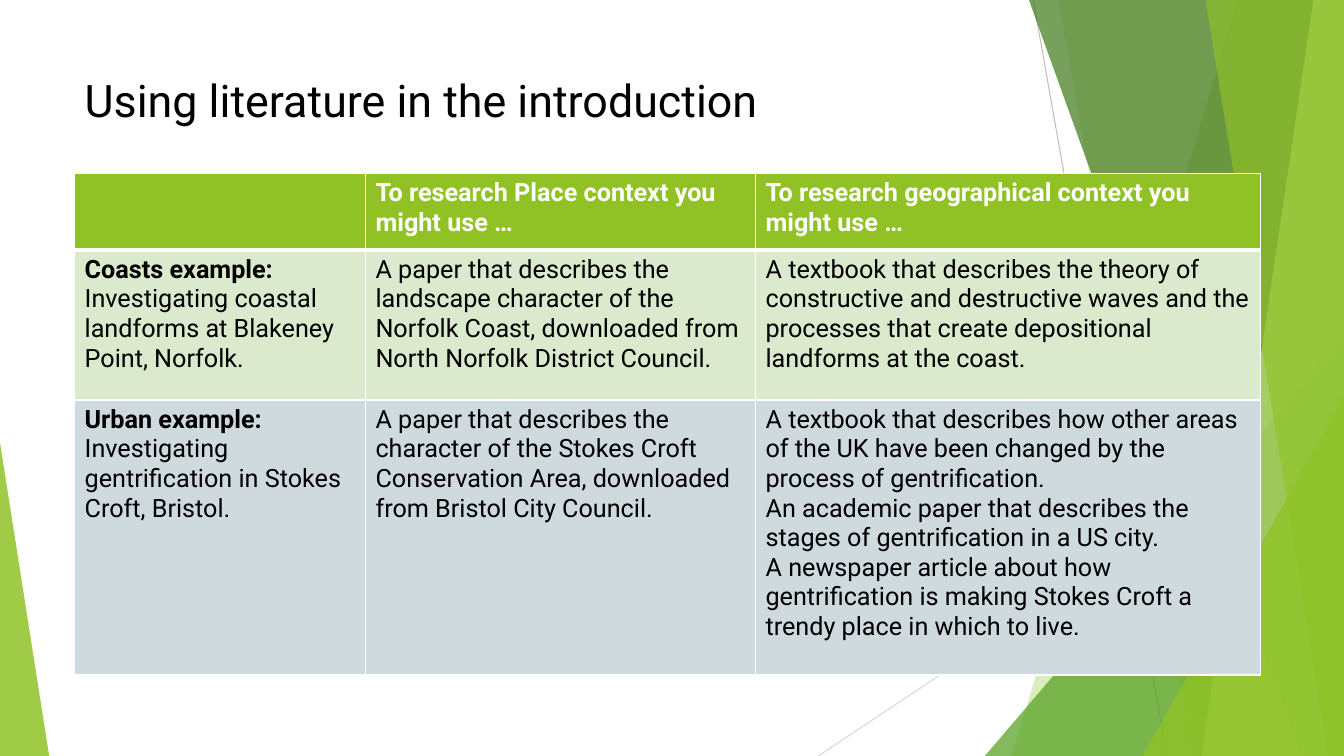
"""Build a slide with a table on using literature in the introduction."""
from lxml import etree
from pptx import Presentation
from pptx.dml.color import RGBColor
from pptx.enum import shapes, text
from pptx.oxml import ns
from pptx.util import Cm, Pt

FONT = "Roboto"
WIDTH, HEIGHT = 33.87, 19.05
TITLE = "Using literature in the introduction"
TITLE_BOX = (1.88, 1.7, 23.88, 2.21)
TABLE_LEFT, TABLE_TOP = 1.88, 4.37
COLUMNS = (7.33, 9.83, 12.73)
ROWS = (
    {"height": 1.93, "fill": "90C226", "color": "FFFFFF", "cells": (
        (),
        (("*To research Place context you might use …",),),
        (("*To research geographical context you might use …",),),
    )},
    {"height": 3.78, "fill": "DBE9CD", "color": "000000", "cells": (
        (("*Coasts example: ", "Investigating coastal landforms at Blakeney Point, Norfolk."),),
        (("A paper that describes the landscape character of the Norfolk Coast, "
          "downloaded from North Norfolk District Council.",),),
        (("A textbook that describes the theory of constructive and destructive waves "
          "and the processes that create depositional landforms at the coast.",),),
    )},
    {"height": 6.93, "fill": "CFDADF", "color": "000000", "cells": (
        (("*Urban example:", " Investigating gentrification in Stokes Croft, Bristol."),),
        (("A paper that describes the character of the Stokes Croft Conservation Area, "
          "downloaded from Bristol City Council.",),),
        (("A textbook that describes how other areas of the UK have been changed "
          "by the process of gentrification.",),
         ("An academic paper that describes the stages of gentrification in a US city.",),
         ("A newspaper article about how gentrification is making Stokes Croft "
          "a trendy place in which to live.",)),
    )},
)
RAYS = (
    ((26.04, 0), (29.41, HEIGHT), "BFBFBF"),
    ((WIDTH, 10.24), (20.62, HEIGHT), "D9D9D9"),
)
# Facets: top x, foot x. Triangles: left, top, width, apex position.
DECOR = (
    ("facet", (31.19, 25.5), "90C226", 30),
    ("facet", (26.67, 30.05), "90C226", 20),
    ("triangle", (24.82, 8.46, 9.05, 1), "54A021", 72),
    ("facet", (25.93, 32.79), "3F7819", 70),
    ("facet", (33.1, 30.28), "C0E474", 70),
    ("facet", (30.38, 33.48), "90C226", 65),
    ("triangle", (28.8, 9.98, 5.07, 1), "90C226", 80),
    ("triangle", (0, 11.15, 1.24, 0), "90C226", 85),
)


def rgb(value):
    """Turn a hex string into a colour."""
    return RGBColor.from_string(value)


def add_span(para, words, size, color, bold=False):
    """Add one formatted run."""
    span = para.add_run()
    span.text = words
    span.font.name, span.font.size, span.font.bold = FONT, Pt(size), bold
    span.font.color.rgb = rgb(color)


def add_ray(page, start, end, color):
    """Draw a thin line without a shadow."""
    ray = page.shapes.add_connector(
        shapes.MSO_CONNECTOR.STRAIGHT, *(Cm(value) for value in start + end))
    ray.line.color.rgb, ray.line.width = rgb(color), Pt(0.75)
    etree.SubElement(ray._element.spPr, ns.qn("a:effectLst"))


def add_decor(page, kind, place, color, opacity):
    """Draw one translucent facet or triangle."""
    if kind == "facet":
        top, foot = place
        corners = [(WIDTH, 0), (WIDTH, HEIGHT), (foot, HEIGHT)]
        builder = page.shapes.build_freeform(Cm(top), 0)
        builder.add_line_segments([(Cm(x), Cm(y)) for x, y in corners])
        shape = builder.convert_to_shape()
    else:
        left, top, width, apex = place
        shape = page.shapes.add_shape(
            shapes.MSO_SHAPE.ISOSCELES_TRIANGLE,
            Cm(left), Cm(top), Cm(width), Cm(HEIGHT - top))
        shape.adjustments[0] = apex
    shape.shadow.inherit = False
    shape.line.fill.background()
    shape.fill.solid()
    shape.fill.fore_color.rgb = rgb(color)
    tint = shape._element.spPr.find(".//" + ns.qn("a:srgbClr"))
    etree.SubElement(tint, ns.qn("a:alpha"), val=str(opacity * 1000))


def add_borders(cell, top, bottom):
    """Give a cell white borders, with top and bottom widths in points."""
    for side, width in (("L", 1), ("R", 1), ("T", top), ("B", bottom)):
        edge = etree.SubElement(
            cell._tc.get_or_add_tcPr(), ns.qn("a:ln" + side), w=str(Pt(width)))
        fill = etree.SubElement(edge, ns.qn("a:solidFill"))
        etree.SubElement(fill, ns.qn("a:srgbClr"), val="FFFFFF")


def fill_cell(cell, paragraphs, row, number):
    """Write and format one table cell."""
    add_borders(cell, 3 if number == 1 else 1, 3 if number == 0 else 1)
    cell.fill.solid()
    cell.fill.fore_color.rgb = rgb(row["fill"])
    for index, spans in enumerate(paragraphs):
        frame = cell.text_frame
        para = frame.add_paragraph() if index else frame.paragraphs[0]
        for words in spans:
            add_span(para, words.lstrip("*"), 18, row["color"], words.startswith("*"))


def add_table(page):
    """Add the table of examples."""
    heights = [row["height"] for row in ROWS]
    table = page.shapes.add_table(
        len(ROWS), len(COLUMNS), Cm(TABLE_LEFT), Cm(TABLE_TOP),
        Cm(sum(COLUMNS)), Cm(sum(heights))).table
    for column, width in zip(table.columns, COLUMNS):
        column.width = Cm(width)
    for number, row in enumerate(ROWS):
        table.rows[number].height = Cm(row["height"])
        for cell, paragraphs in zip(table.rows[number].cells, row["cells"]):
            fill_cell(cell, paragraphs, row, number)


def add_title(page):
    """Place and format the title."""
    title = page.shapes.title
    title.left, title.top, title.width, title.height = (Cm(value) for value in TITLE_BOX)
    title.text_frame.vertical_anchor = text.MSO_ANCHOR.TOP
    para = title.text_frame.paragraphs[0]
    para.alignment = text.PP_ALIGN.LEFT
    add_span(para, TITLE, 32, "000000")


def main():
    """Build and save the deck."""
    deck = Presentation()
    deck.slide_width, deck.slide_height = Cm(WIDTH), Cm(HEIGHT)
    page = deck.slides.add_slide(deck.slide_layouts[5])
    for ray in RAYS:
        add_ray(page, *ray)
    for item in DECOR:
        add_decor(page, *item)
    add_title(page)
    add_table(page)
    deck.save("out.pptx")


if __name__ == "__main__":
    main()
